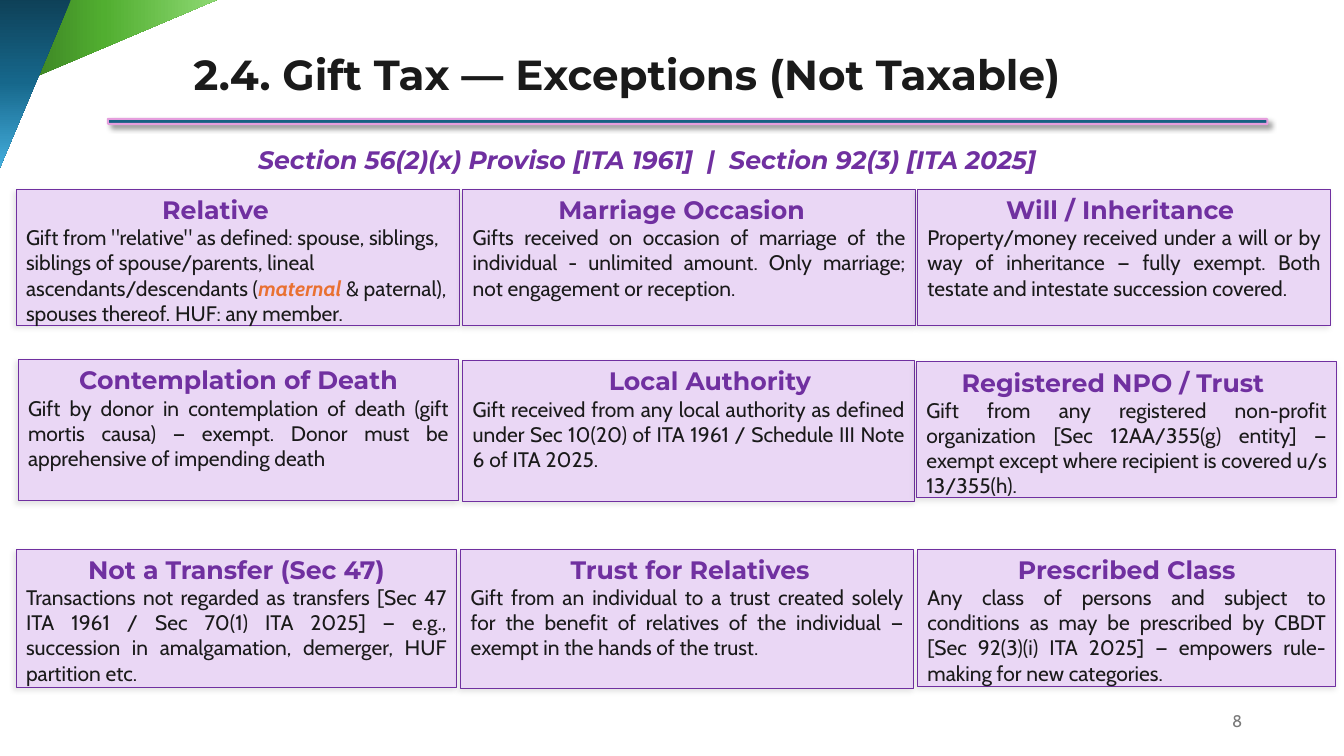
from lxml import etree
from pptx import Presentation
from pptx.dml.color import RGBColor
from pptx.enum.shapes import MSO_SHAPE as SHAPE
from pptx.enum.text import MSO_ANCHOR as ANCHOR, MSO_AUTO_SIZE as AUTO, PP_ALIGN as ALIGN
from pptx.oxml import parse_xml
from pptx.oxml.ns import qn
from pptx.util import Inches, Pt

A_NS = 'xmlns:a="http://schemas.openxmlformats.org/drawingml/2006/main"'


def rgb(value):
    return RGBColor.from_string(value)


class Deck:
    HEAD, BODY = "Montserrat", "Cabin"
    INK, PURPLE, LILAC, ORANGE, GREY = "1A1A1A", "7030A0", "EAD7F5", "E97132", "797979"

    def __init__(self, prs):
        self.s = prs.slides.add_slide(prs.slide_layouts[5])

    def font(self, font, size, name, color, bold=False, italic=False):
        font.size, font.name, font.bold, font.italic = Pt(size), name, bold, italic
        font.color.rgb = rgb(color)

    def shape(self, kind, at, fill=None, line=None, width=1):
        sp = self.s.shapes.add_shape(kind, *map(Inches, at))
        sp.shadow.inherit = False
        if fill:
            sp.fill.solid()
            sp.fill.fore_color.rgb = rgb(fill)
        if line:
            sp.line.color.rgb = rgb(line)
            sp.line.width = Pt(width)
        else:
            sp.line.fill.background()
        return sp

    def shadow(self, sp, alpha, blur, dist, angle):
        effects = sp._element.spPr.find(qn("a:effectLst"))
        effects.append(parse_xml(
            f'<a:outerShdw {A_NS} blurRad="{Pt(blur)}" dist="{Pt(dist)}" dir="{angle * 60000}" '
            f'algn="tl" rotWithShape="0"><a:srgbClr val="000000">'
            f'<a:alpha val="{alpha * 1000}"/></a:srgbClr></a:outerShdw>'))

    def triangle(self, at, colors, rotation=0, flip=False):
        sp = self.shape(SHAPE.RIGHT_TRIANGLE, at)
        sp.rotation = rotation
        sp.fill.gradient()
        grad = sp._element.spPr.find(qn("a:gradFill"))
        grad.set("rotWithShape", "1")
        grad.find(qn("a:lin")).set("ang", str(270 * 60000))
        stops = grad.find(qn("a:gsLst"))
        for old in list(stops):
            stops.remove(old)
        for pos, color in zip((0, 48, 100), colors):
            gs = etree.SubElement(stops, qn("a:gs"), pos=str(pos * 1000))
            etree.SubElement(gs, qn("a:srgbClr"), val=color)
        if flip:
            sp._element.spPr.find(qn("a:xfrm")).set("flipV", "1")

    def title(self, at, text):
        sp = self.s.shapes.title
        sp.left, sp.top, sp.width, sp.height = map(Inches, at)
        tf = sp.text_frame
        tf.auto_size, tf.vertical_anchor = AUTO.NONE, ANCHOR.BOTTOM
        tf.margin_left = tf.margin_right = tf.margin_top = tf.margin_bottom = 0
        p = tf.paragraphs[0]
        p.text, p.alignment = text, ALIGN.CENTER
        self.font(p.font, 30, self.HEAD, self.INK, True)

    def text(self, at, text, align, *style):
        tf = self.s.shapes.add_textbox(*map(Inches, at)).text_frame
        tf.word_wrap, tf.vertical_anchor = True, ANCHOR.MIDDLE
        p = tf.paragraphs[0]
        p.text, p.alignment = text, align
        self.font(p.font, *style)

    def card(self, at, heading, indent, body, align=ALIGN.JUSTIFY):
        """A heading with no indent is centred; a body part in a tuple is emphasised."""
        sp = self.shape(SHAPE.RECTANGLE, at, self.LILAC, self.PURPLE, 0.8)
        self.shadow(sp, 10, 4, 2, 135)
        tf = sp.text_frame
        tf.word_wrap, tf.vertical_anchor = True, ANCHOR.TOP
        p = tf.paragraphs[0]
        p.text = heading
        p.alignment = ALIGN.LEFT if indent else ALIGN.CENTER
        if indent:
            p._p.get_or_add_pPr().set("marL", str(Inches(indent)))
        self.font(p.font, 18, self.HEAD, self.PURPLE, True)
        p = tf.add_paragraph()
        p.alignment = align
        for part in body:
            strong = isinstance(part, tuple)
            r = p.add_run()
            r.text = part[0] if strong else part
            self.font(r.font, 15, self.BODY, self.ORANGE if strong else self.INK, strong, strong)


CARDS = [
    # First row
    ((0.16, 1.88, 4.4, 1.35), "Relative", 1.35,
     ['Gift from "relative" as defined: spouse, siblings, siblings of spouse/parents, '
      "lineal ascendants/descendants (", ("maternal",),
      " & paternal), spouses thereof. HUF: any member."], ALIGN.LEFT),
    ((4.59, 1.88, 4.49, 1.35), "Marriage Occasion", 0.85,
     ["Gifts received on occasion of marriage of the individual - unlimited amount. "
      "Only marriage; not engagement or reception."]),
    ((9.1, 1.88, 4.1, 1.35), "Will / Inheritance", 0.78,
     ["Property/money received under a will or by way of inheritance — fully exempt. "
      "Both testate and intestate succession covered."]),
    # Second row
    ((0.18, 3.57, 4.37, 1.4), "Contemplation of Death", 0,
     ["Gift by donor in contemplation of death (gift mortis causa) — exempt. "
      "Donor must be apprehensive of impending death"]),
    ((4.59, 3.58, 4.48, 1.4), "Local Authority", 1.35,
     ["Gift received from any local authority as defined under Sec 10(20) of "
      "ITA 1961 / Schedule III Note 6 of ITA 2025."]),
    ((9.09, 3.59, 4.17, 1.35), "Registered NPO / Trust", 0.35,
     ["Gift from any registered non-profit organization [Sec 12AA/355(g) entity] — "
      "exempt except where recipient is covered u/s 13/355(h)."]),
    # Third row
    ((0.16, 5.45, 4.37, 1.37), "Not a Transfer (Sec 47)", 0,
     ["Transactions not regarded as transfers [Sec 47 ITA 1961 / Sec 70(1) ITA 2025] — "
      "e.g., succession in amalgamation, demerger, HUF partition etc."]),
    ((4.57, 5.45, 4.49, 1.38), "Trust for Relatives", 0.99,
     ["Gift from an individual to a trust created solely for the benefit of relatives "
      "of the individual — exempt in the hands of the trust."]),
    ((9.1, 5.45, 4.15, 1.36), "Prescribed Class", 0,
     ["Any class of persons and subject to conditions as may be prescribed by CBDT "
      "[Sec 92(3)(i) ITA 2025] — empowers rule-making for new categories."]),
]


def main():
    prs = Presentation()
    prs.slide_width, prs.slide_height = Inches(13.33), Inches(7.5)
    deck = Deck(prs)

    # Title rule and corner triangles
    rule = deck.shape(SHAPE.SNIP_2_DIAG_RECTANGLE, (1.07, 1.18, 11.5, 0.05), "156082", "E59EDD", 1.5)
    deck.shadow(rule, 40, 4, 3, 45)
    deck.triangle((0.61, -0.64, 0.93, 2.19), ("34701F", "51AE30", "8ED973"), rotation=90)
    deck.triangle((-0.02, -0.02, 0.73, 1.73), ("0E4057", "16678B", "46B1E1"), flip=True)

    # Headings
    deck.title((0.92, 0.41, 10.6, 0.57), "2.4. Gift Tax — Exceptions (Not Taxable)")
    deck.text((0.92, 1.4, 11, 0.36), "Section 56(2)(x) Proviso [ITA 1961]  |  Section 92(3) [ITA 2025]",
              ALIGN.CENTER, 18, deck.HEAD, deck.PURPLE, True, True)

    # Exception cards
    for card in CARDS:
        deck.card(*card)

    # Slide number
    deck.text((9.42, 6.95, 3, 0.4), "8", ALIGN.RIGHT, 12, deck.BODY, deck.GREY)
    prs.save("out.pptx")


if __name__ == "__main__":
    main()
